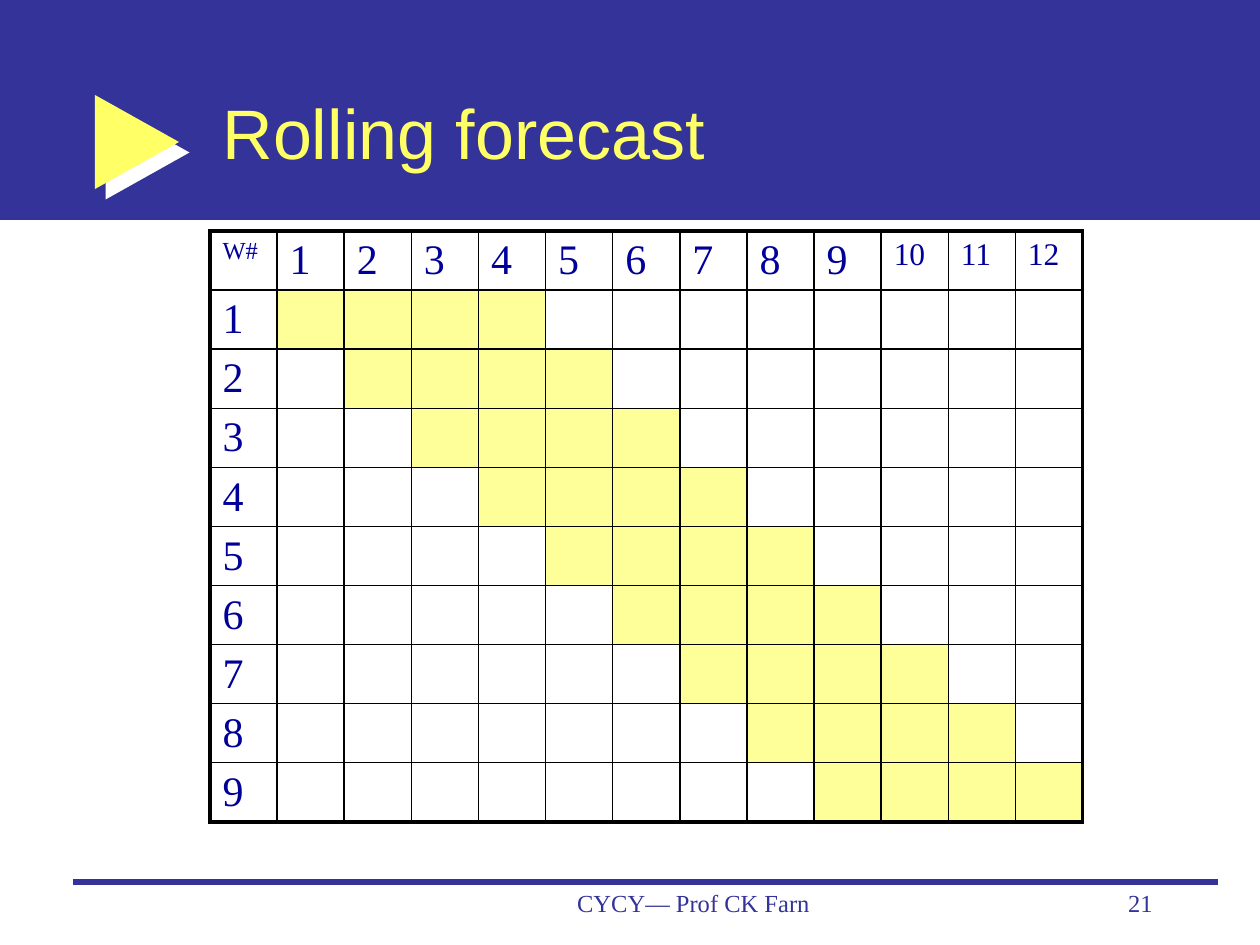
"""Build the rolling forecast slide: a table of four-week forecast windows."""
from lxml import etree
from pptx import Presentation, util as u
from pptx.dml.color import RGBColor
from pptx.enum import shapes, text
from pptx.oxml.ns import qn

THEME = {
    "blue": "333399", "navy": "000099", "yellow": "FFFF66", "window": "FFFF99",
    "white": "FFFFFF", "black": "000000", "sans": "Arial", "serif": "Times New Roman",
    "title": 40, "number": 24, "long number": 18, "small": 14,
    "outer border": 2.25, "inner border": 1, "rule": 3,
}
WEEKS, FORECASTS, WINDOW = 12, 9, 4
TABLE_WIDTH, ROW_HEIGHT = 873, 59


def px(length):
    return u.Emu(round(length * 914400 / 126))


def write(frame, words, font, size, color, align=text.PP_ALIGN.LEFT):
    paragraph = frame.paragraphs[0]
    paragraph.alignment = align
    run = paragraph.add_run()
    run.text = words
    for name, value in {"name": font, "size": u.Pt(size), "bold": False}.items():
        setattr(run.font, name, value)
    run.font.color.rgb = RGBColor.from_string(color)


presentation = Presentation()
presentation.slide_width, presentation.slide_height = px(1260), px(945)
slide = presentation.slides.add_slide(presentation.slide_layouts[5])

banner = slide.shapes.add_shape(shapes.MSO_SHAPE.RECTANGLE, 0, 0, px(1260), px(220))
arrow = slide.shapes.add_shape(shapes.MSO_SHAPE.RIGHT_ARROW, px(95), px(95), px(84), px(94))
arrow.adjustments[0], arrow.adjustments[1] = 0.38, 1
for shape, color in ((banner, THEME["blue"]), (arrow, THEME["yellow"])):
    shape.shadow.inherit = False
    shape.fill.solid()
    shape.fill.fore_color.rgb = RGBColor.from_string(color)
    shape.line.fill.background()
effects = arrow.element.spPr.find(qn("a:effectLst"))
shadow = etree.SubElement(effects, qn("a:outerShdw"), dist=str(u.Pt(8.5)), dir="2700000",
                          algn="ctr", rotWithShape="0")
etree.SubElement(shadow, qn("a:srgbClr"), val=THEME["white"])

rule = slide.shapes.add_connector(shapes.MSO_CONNECTOR.STRAIGHT, px(73), px(882), px(1218), px(882))
rule.line.color.rgb = RGBColor.from_string(THEME["blue"])
rule.line.width = u.Pt(THEME["rule"])
etree.SubElement(rule.element.spPr, qn("a:effectLst"))

for words, left, width, align in (
    ("CYCY— Prof CK Farn", 494, 399, text.PP_ALIGN.CENTER),
    ("21", 903, 262, text.PP_ALIGN.RIGHT),
):
    footer = slide.shapes.add_textbox(px(left), px(882), px(width), px(63))
    footer.text_frame.word_wrap = True
    write(footer.text_frame, words, THEME["serif"], THEME["small"], THEME["blue"], align)

title = slide.shapes.title
title.element.getparent().append(title.element)
for name, value in {"left": 210, "top": 53, "width": 955, "height": 157}.items():
    setattr(title, name, px(value))
title.text_frame.auto_size = text.MSO_AUTO_SIZE.NONE
title.text_frame.vertical_anchor = text.MSO_ANCHOR.MIDDLE
write(title.text_frame, "Rolling forecast", THEME["sans"], THEME["title"], THEME["yellow"])

rows, columns = FORECASTS + 1, WEEKS + 1
table = slide.shapes.add_table(rows, columns, px(210), px(231), px(TABLE_WIDTH),
                               px(ROW_HEIGHT * rows)).table
table.first_row = table.horz_banding = False
for column in table.columns:
    column.width = px(TABLE_WIDTH / columns)

for forecast in range(rows):
    table.rows[forecast].height = px(ROW_HEIGHT)
    for week in range(columns):
        cell = table.cell(forecast, week)
        edges = {"a:lnL": week == 0, "a:lnR": week == WEEKS,
                 "a:lnT": forecast == 0, "a:lnB": forecast == FORECASTS}
        properties = cell._tc.get_or_add_tcPr()
        for side, is_outer in edges.items():
            width = THEME["outer border" if is_outer else "inner border"]
            border = etree.SubElement(properties, qn(side), w=str(u.Pt(width)))
            fill = etree.SubElement(border, qn("a:solidFill"))
            etree.SubElement(fill, qn("a:srgbClr"), val=THEME["black"])
        in_window = forecast > 0 and forecast <= week < forecast + WINDOW
        cell.fill.solid()
        cell.fill.fore_color.rgb = RGBColor.from_string(THEME["window" if in_window else "white"])
        if forecast == 0 or week == 0:
            number = forecast + week
            words = str(number) if number else "W#"
            size = "small" if number == 0 else "number" if number < 10 else "long number"
            write(cell.text_frame, words, THEME["serif"], THEME[size], THEME["navy"])

presentation.save("out.pptx")
